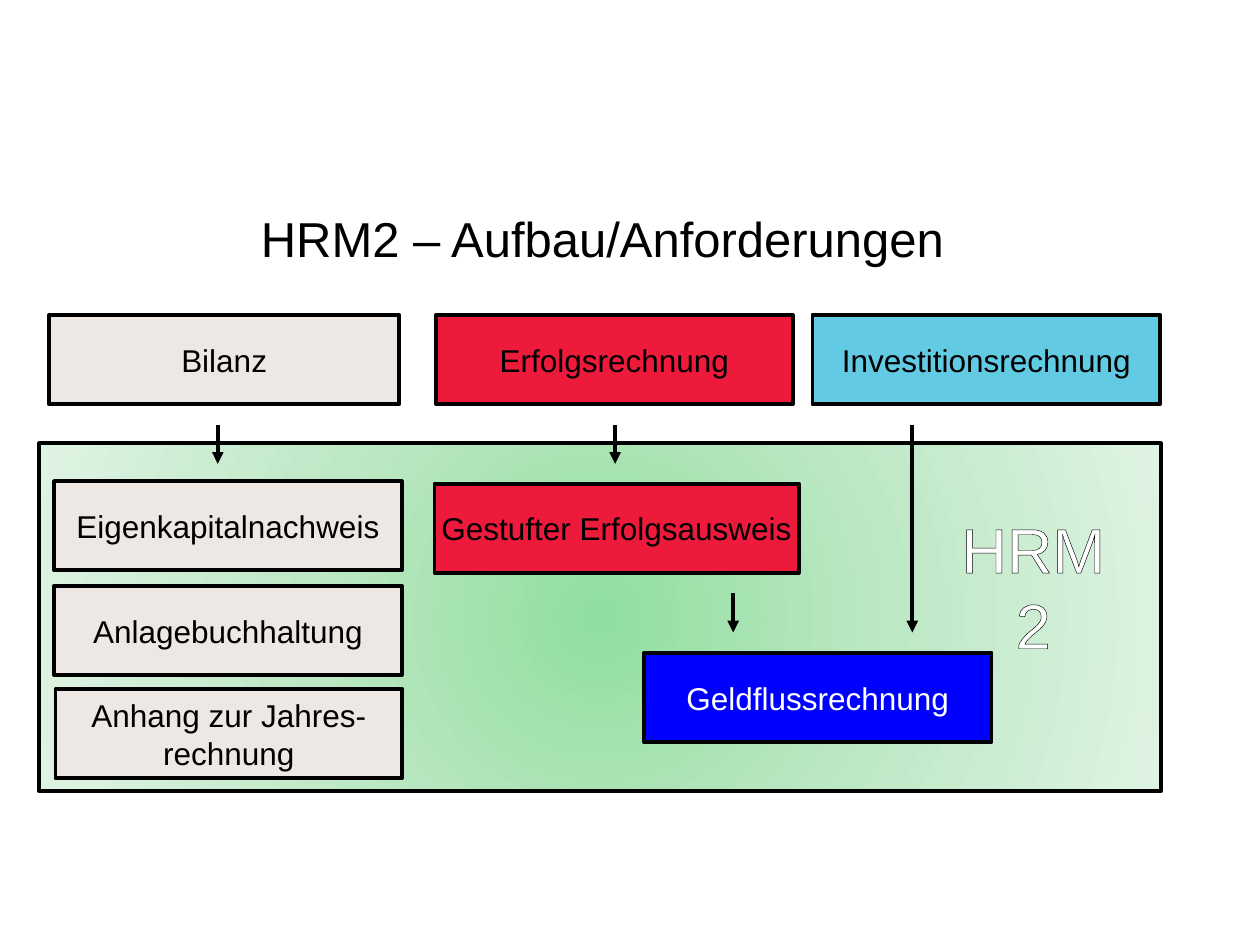
from dataclasses import dataclass

from lxml import etree
from pptx import Presentation
from pptx import util as u
from pptx.dml.color import RGBColor
from pptx.enum import shapes, text
from pptx.oxml import parse_xml
from pptx.oxml.ns import nsdecls, qn


@dataclass(frozen=True)
class Theme:
    font: str = "Arial"
    title_size: int = 28
    label_size: int = 18
    mark_size: int = 36
    line_width: float = 2.25
    black: str = "000000"
    white: str = "FFFFFF"
    stone: str = "EEE8E5"
    red: str = "ED1A3B"
    cyan: str = "62CAE3"
    blue: str = "0000FF"
    greens: tuple = ("91DEA0", "BDE8C5", "DFF3E3")


@dataclass(frozen=True)
class Block:
    label: str
    left: float
    top: float
    width: float
    fill: str
    color: str = Theme.black


@dataclass(frozen=True)
class Arrow:
    x: float
    top: float
    bottom: float


THEME = Theme()
BLOCK_HEIGHT = 1.8
TOP_ROW = 6.35
ARROW_TOP = 8.56
CASH_FLOW_ARROW_END = 12.75

BLOCKS = (
    # Basic statements
    Block("Bilanz", 0.99, TOP_ROW, 7.06, THEME.stone),
    Block("Erfolgsrechnung", 8.79, TOP_ROW, 7.19, THEME.red),
    Block("Investitionsrechnung", 16.38, TOP_ROW, 7.01, THEME.cyan),
    # HRM2 additions
    Block("Eigenkapitalnachweis", 1.09, 9.7, 7.01, THEME.stone),
    Block("Anlagebuchhaltung", 1.09, 11.81, 7.01, THEME.stone),
    Block("Anhang zur Jahres-\nrechnung", 1.12, 13.89, 6.99, THEME.stone),
    Block("Gestufter Erfolgsausweis", 8.76, 9.75, 7.34, THEME.red),
    Block("Geldflussrechnung", 12.98, 13.16, 7.01, THEME.blue, THEME.white),
)

ARROWS = (
    Arrow(4.39, ARROW_TOP, 9.35),
    Arrow(12.4, ARROW_TOP, 9.35),
    Arrow(14.78, 11.96, CASH_FLOW_ARROW_END),
    Arrow(18.39, ARROW_TOP, CASH_FLOW_ARROW_END),
)


def rgb(value: str) -> RGBColor:
    return RGBColor.from_string(value)


def write(box, words: str, size: int, color: str, wrap: bool = False,
          anchor=text.MSO_ANCHOR.MIDDLE):
    """Write centred words into a box and return its last span."""
    frame = box.text_frame
    frame.word_wrap = wrap
    frame.vertical_anchor = anchor
    para = frame.paragraphs[0]
    para.alignment = text.PP_ALIGN.CENTER
    for index, line in enumerate(words.split("\n")):
        if index:
            para.add_line_break()
        span = para.add_run()
        span.text = line
        span.font.name = THEME.font
        span.font.size = u.Pt(size)
        span.font.color.rgb = rgb(color)
    return span


def add_text(page, words: str, left: float, top: float, width: float,
             height: float, size: int, color: str, **layout):
    box = page.shapes.add_textbox(u.Cm(left), u.Cm(top), u.Cm(width), u.Cm(height))
    return write(box, words, size, color, **layout)


def add_frame(page, left: float, top: float, width: float, height: float):
    box = page.shapes.add_shape(shapes.MSO_SHAPE.RECTANGLE, u.Cm(left),
                                u.Cm(top), u.Cm(width), u.Cm(height))
    box.shadow.inherit = False
    box.line.color.rgb = rgb(THEME.black)
    box.line.width = u.Pt(THEME.line_width)
    return box


def add_panel(page, left: float, top: float, width: float, height: float) -> None:
    """Add the frame with a gradient that radiates from its centre."""
    box = add_frame(page, left, top, width, height)
    box.fill.background()
    stops = "".join(
        f'<a:gs pos="{index * 50000}"><a:srgbClr val="{color}"/></a:gs>'
        for index, color in enumerate(THEME.greens))
    gradient = parse_xml(
        f'<a:gradFill {nsdecls("a")} rotWithShape="1"><a:gsLst>{stops}</a:gsLst>'
        '<a:path path="circle"><a:fillToRect l="50000" t="50000" r="50000" '
        'b="50000"/></a:path></a:gradFill>')
    properties = box._element.spPr
    properties.replace(properties.find(qn("a:noFill")), gradient)


def add_block(page, block: Block) -> None:
    box = add_frame(page, block.left, block.top, block.width, BLOCK_HEIGHT)
    box.fill.solid()
    box.fill.fore_color.rgb = rgb(block.fill)
    write(box, block.label, THEME.label_size, block.color)


def add_arrow(page, arrow: Arrow) -> None:
    line = page.shapes.add_connector(
        shapes.MSO_CONNECTOR.STRAIGHT, u.Cm(arrow.x), u.Cm(arrow.top),
        u.Cm(arrow.x), u.Cm(arrow.bottom))
    line.line.color.rgb = rgb(THEME.black)
    line.line.width = u.Pt(THEME.line_width)
    etree.SubElement(line.line._get_or_add_ln(), qn("a:tailEnd"), type="triangle")
    etree.SubElement(line._element.spPr, qn("a:effectLst"))


def outline(span, color: str, width: float) -> None:
    span._r.get_or_add_rPr().insert(0, parse_xml(
        f'<a:ln {nsdecls("a")} w="{u.Pt(width)}"><a:solidFill>'
        f'<a:srgbClr val="{color}"/></a:solidFill></a:ln>'))


def main() -> None:
    deck = Presentation()
    deck.slide_width, deck.slide_height = u.Cm(25.4), u.Cm(19.05)
    page = deck.slides.add_slide(deck.slide_layouts[6])

    # Title
    add_text(page, "HRM2 – Aufbau/Anforderungen", 0.71, 3.71, 22.86, 2.16,
             THEME.title_size, THEME.black, wrap=True)

    # Green area, statements and the flow between them
    add_panel(page, 0.79, 8.94, 22.61, 7.01)
    for block in BLOCKS:
        add_block(page, block)
    for arrow in ARROWS:
        add_arrow(page, arrow)

    # Outlined name of the area
    mark = add_text(page, "HRM2", 18.8, 10.16, 4.06, BLOCK_HEIGHT,
                    THEME.mark_size, THEME.white, anchor=text.MSO_ANCHOR.TOP)
    outline(mark, THEME.black, 0.75)

    deck.save("out.pptx")


if __name__ == "__main__":
    main()
